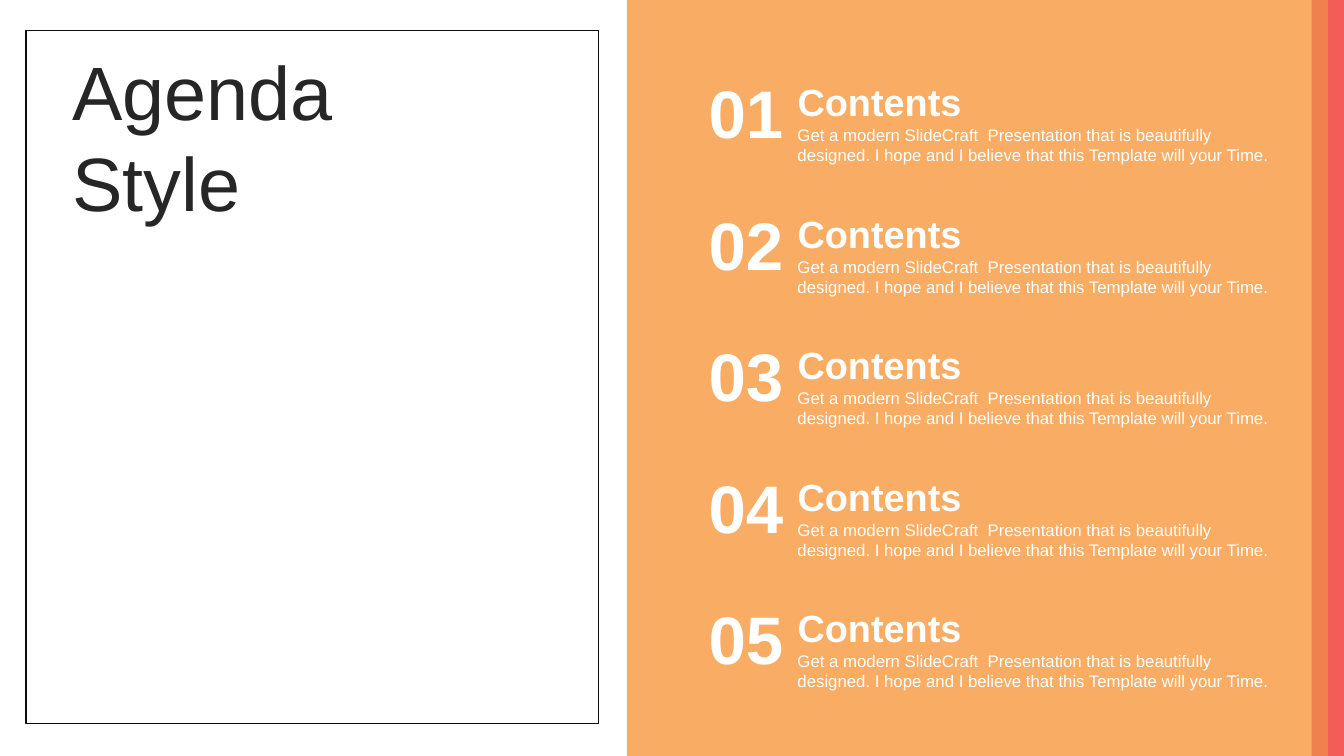
from dataclasses import dataclass

from lxml.etree import SubElement
from pptx import Presentation
from pptx.dml.color import RGBColor
from pptx.enum.shapes import MSO_SHAPE
from pptx.enum.text import MSO_ANCHOR, MSO_AUTO_SIZE, PP_ALIGN
from pptx.oxml.ns import qn
from pptx.slide import Slide
from pptx.util import Inches, Pt

SLIDE_WIDTH = Inches(13.33)
SLIDE_HEIGHT = Inches(7.5)
COLORS = {
    "white": "FFFFFF",
    "ink": "262626",
    "outline": "0D0D0D",
    "orange": "F89E48",
    "coral": "F0804E",
    "red": "F45C58",
}
ITEM_COUNT = 5
ITEM_PITCH = 17.4
DESCRIPTION = (
    "Get a modern SlideCraft  Presentation that is beautifully designed. "
    "I hope and I believe that this Template will your Time."
)


@dataclass(frozen=True)
class Region:
    """Place on the slide, in percent of its width and height."""

    left: float
    top: float
    width: float
    height: float

    def emu(self, row_offset: float = 0) -> tuple[int, int, int, int]:
        return (
            round(SLIDE_WIDTH * self.left / 100),
            round(SLIDE_HEIGHT * (self.top + row_offset) / 100),
            round(SLIDE_WIDTH * self.width / 100),
            round(SLIDE_HEIGHT * self.height / 100),
        )


@dataclass(frozen=True)
class Block:
    region: Region
    fill: str
    opacity: int = 100
    outline: str | None = None


@dataclass(frozen=True)
class TextStyle:
    region: Region
    size: int
    color: str = "white"
    bold: bool = False
    align: PP_ALIGN = PP_ALIGN.LEFT
    anchor: MSO_ANCHOR = MSO_ANCHOR.TOP
    side_inset: float = 0.1


BACKDROP = (
    Block(Region(1.95, 4, 42.6, 91.7), "white", outline="outline"),
    Block(Region(46.65, 0, 53.35, 100), "orange", opacity=85),
)
STRIPES = (
    Block(Region(98.8, 0, 1.2, 100), "red"),
    Block(Region(97.6, 0, 1.2, 100), "coral"),
)
TITLE = TextStyle(Region(4.65, 5.2, 50.8, 25.6), 54, "ink", anchor=MSO_ANCHOR.MIDDLE)
BODY = TextStyle(Region(58.6, 15.85, 37, 6.7), 12)
HEADING = TextStyle(Region(58.45, 9.75, 37, 7.5), 27, bold=True, side_inset=0.12)
NUMBER = TextStyle(
    Region(51.55, 8.8, 7.9, 12.1), 48, bold=True, align=PP_ALIGN.CENTER, side_inset=0.12
)


def color(name: str) -> RGBColor:
    return RGBColor.from_string(COLORS[name])


def add_block(page: Slide, block: Block) -> None:
    box = page.shapes.add_shape(MSO_SHAPE.RECTANGLE, *block.region.emu())
    box.shadow.inherit = False
    box.fill.solid()
    box.fill.fore_color.rgb = color(block.fill)
    if block.opacity < 100:
        tint = box.fill._xPr.find(f".//{qn('a:srgbClr')}")
        SubElement(tint, qn("a:alpha"), val=str(block.opacity * 1000))
    if block.outline:
        box.line.color.rgb = color(block.outline)
        box.line.width = Pt(1)
    else:
        box.line.fill.background()


def add_text(page: Slide, style: TextStyle, text: str, row_offset: float = 0) -> None:
    """Write one paragraph per line of text in a box of the given style."""
    frame = page.shapes.add_textbox(*style.region.emu(row_offset)).text_frame
    frame.word_wrap = True
    frame.auto_size = MSO_AUTO_SIZE.SHAPE_TO_FIT_TEXT
    frame.vertical_anchor = style.anchor
    frame.margin_left = frame.margin_right = Inches(style.side_inset)
    frame.text = text
    for para in frame.paragraphs:
        para.alignment = style.align
        para.font.name = "Arial"
        para.font.size = Pt(style.size)
        para.font.bold = style.bold
        para.font.color.rgb = color(style.color)


def main() -> None:
    deck = Presentation()
    deck.slide_width = SLIDE_WIDTH
    deck.slide_height = SLIDE_HEIGHT
    page = deck.slides.add_slide(deck.slide_layouts[6])
    for block in BACKDROP:
        add_block(page, block)
    add_text(page, TITLE, "Agenda\nStyle")
    for index in range(ITEM_COUNT):
        row_offset = index * ITEM_PITCH
        add_text(page, BODY, DESCRIPTION, row_offset)
        add_text(page, HEADING, "Contents", row_offset)
        add_text(page, NUMBER, f"{index + 1:02}", row_offset)
    for stripe in STRIPES:
        add_block(page, stripe)
    deck.save("out.pptx")


if __name__ == "__main__":
    main()
